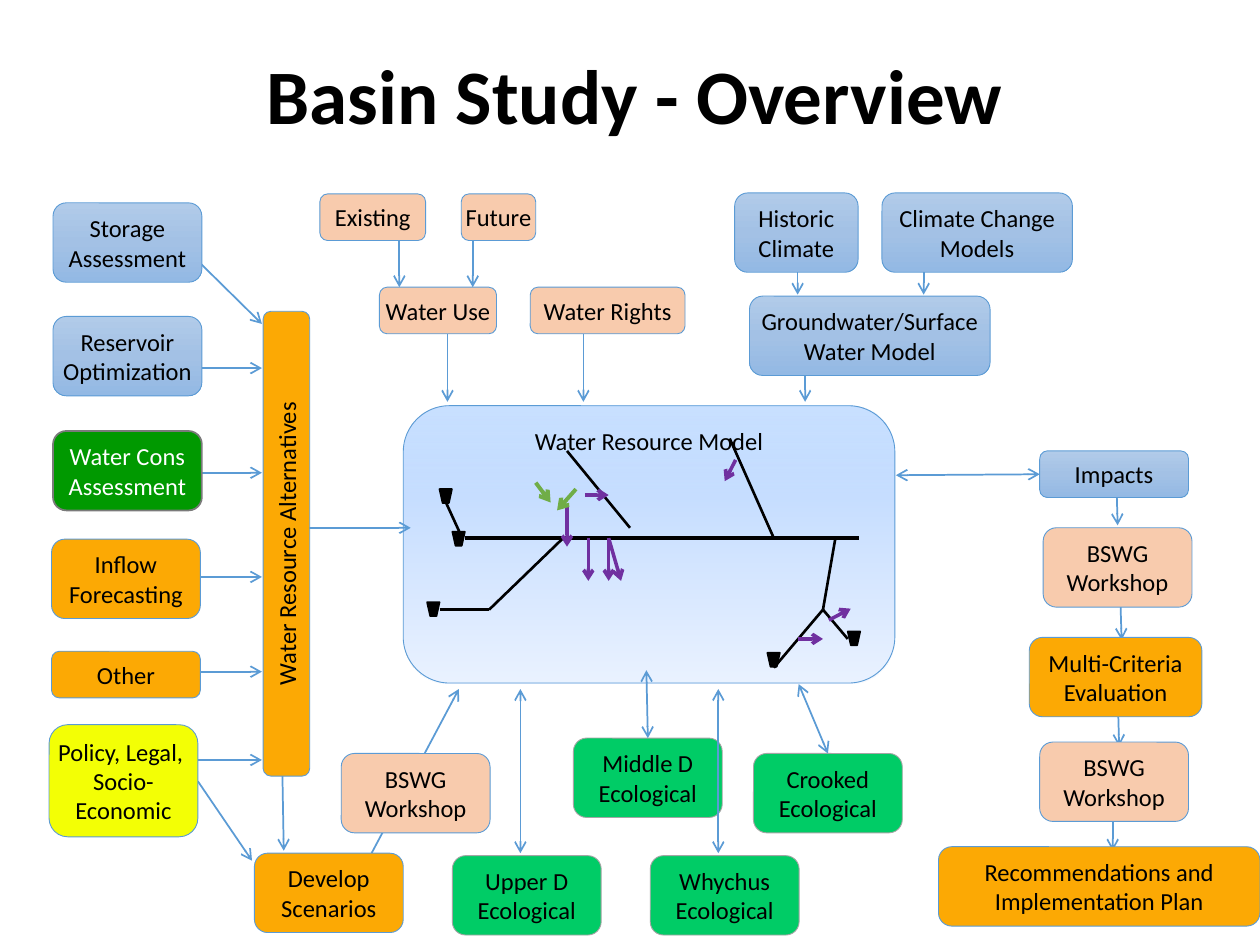
from lxml import etree
from pptx import Presentation
from pptx.dml.color import RGBColor
from pptx.enum import shapes as sh, text as tx
from pptx.oxml.ns import qn
from pptx.util import Cm, Pt

BLUE, ORANGE, PEACH, GREEN = "5B9BD5", "FCA904", "F8CBAD", "00CC66"
PURPLE, LEAF, BLACK, GREY = "7030A0", "70AD47", "000000", "A5A5A5"
# Gradient stops: position and opacity in percent
SKY = [(0, "B1CBE9", 100), (50, "A3C1E5", 100), (100, "93B9E4", 100)]
PALE = [(0, "B0D2FF", 68), (35, "C7DEFF", 100), (100, "EAF2FF", 100)]
rgb = RGBColor.from_string

prs = Presentation()
prs.slide_width, prs.slide_height = Cm(25.4), Cm(19.05)
slide = prs.slides.add_slide(prs.slide_layouts[5])

title = slide.shapes.title
title.left, title.top, title.width, title.height = Cm(1.47), Cm(0.64), Cm(22.66), Cm(2.74)
title.text_frame.vertical_anchor = tx.MSO_ANCHOR.MIDDLE
heading = title.text_frame.paragraphs[0]
heading.alignment, heading.line_spacing = tx.PP_ALIGN.CENTER, 0.9
run = heading.add_run()
run.text = "Basin Study - Overview"
run.font.name, run.font.size, run.font.bold = "Calibri", Pt(44), True
run.font.color.rgb = rgb(BLACK)


def add_box(label, fill, left, top, width=3, height=1.6, edge=BLUE, edge_width=0.5, ink=BLACK):
    box = slide.shapes.add_shape(sh.MSO_SHAPE.ROUNDED_RECTANGLE,
                                 Cm(left), Cm(top), Cm(width), Cm(height))
    box.shadow.inherit = False
    if isinstance(fill, str):
        box.fill.solid()
        box.fill.fore_color.rgb = rgb(fill)
    else:
        box.fill.gradient()
        box.fill.gradient_angle = 270
        stops = box.element.spPr.find(qn("a:gradFill")).find(qn("a:gsLst"))
        for old in list(stops):
            stops.remove(old)
        for position, colour, opacity in fill:
            stop = etree.SubElement(stops, qn("a:gs"), pos=str(position * 1000))
            tone = etree.SubElement(stop, qn("a:srgbClr"), val=colour)
            if opacity < 100:
                etree.SubElement(tone, qn("a:alpha"), val=str(opacity * 1000))
    box.line.color.rgb, box.line.width = rgb(edge), Pt(edge_width)
    frame = box.text_frame
    frame.word_wrap = True
    frame.margin_left = frame.margin_right = 0
    frame.margin_top = frame.margin_bottom = Cm(0.13)
    frame.vertical_anchor = tx.MSO_ANCHOR.MIDDLE
    for i, words in enumerate(label.split("\n")):
        para = frame.paragraphs[0] if i == 0 else frame.add_paragraph()
        para.alignment = tx.PP_ALIGN.CENTER
        run = para.add_run()
        run.text = words
        run.font.name, run.font.size = "Calibri", Pt(14)
        run.font.color.rgb = rgb(ink)
    return box


def add_line(x1, y1, x2, y2, colour=BLUE, width=1, ends=("tailEnd",)):
    line = slide.shapes.add_connector(sh.MSO_CONNECTOR.STRAIGHT, Cm(x1), Cm(y1), Cm(x2), Cm(y2))
    line.line.color.rgb, line.line.width = rgb(colour), Pt(width)
    for end in ends:
        etree.SubElement(line.element.spPr.find(qn("a:ln")), qn("a:" + end), type="arrow")
    etree.SubElement(line.element.spPr, qn("a:effectLst"))
    return line


BOTH = ("headEnd", "tailEnd")

model = add_box("Water Resource Model", PALE, 8.13, 8.18, 9.91, 5.59)
model.text_frame.vertical_anchor = tx.MSO_ANCHOR.TOP

# Arrows that run behind the boxes
for y in (7.42, 9.53, 11.63, 13.54, 15.32):
    add_line(3.78, y, 5.28, y)
for x in (9.02, 11.76, 16.23):
    add_line(x, 6.53, x, 8.1)
for x in (16.08, 18.62):
    add_line(x, 4.93, x, 5.94)
for x in (8.05, 9.53):
    add_line(x, 4.8, x, 5.79)
for ends in [
    (4.04, 5.31, 5.28, 6.53),
    (5.69, 15.44, 5.72, 17.15),
    (3.99, 15.75, 5.08, 17.35),
    (7.49, 17.2, 9.25, 13.89),
    (22.5, 9.53, 22.53, 10.59),
    (22.58, 11.84, 22.61, 12.9),
    (22.53, 13.94, 22.56, 15.04),
]:
    add_line(*ends)
add_line(22.43, 15.7, 22.43, 17.15, ends=BOTH)
add_line(8.28, 10.64, 5.97, 10.64, ends=BOTH)

# Inputs to the alternatives
add_box("Storage Assessment", SKY, 1.07, 4.09)
add_box("Reservoir Optimization", SKY, 1.07, 6.38)
add_box("Water Cons Assessment", "009900", 1.07, 8.69, edge="7A7A7A", edge_width=1, ink="FFFFFF")
add_box("Inflow Forecasting", ORANGE, 1.04, 10.87)
add_box("Other", ORANGE, 1.04, 13.13, height=0.94)
add_box("Policy, Legal, \nSocio-Economic", "F3FF05", 0.99, 14.61, height=2.26)
alternatives = add_box("Water Resource Alternatives", ORANGE, 1.09, 10.49, 9.37, 0.94)
alternatives.rotation = 270
add_box("Develop Scenarios", ORANGE, 5.13, 17.2)
add_box("BSWG Workshop", PEACH, 6.88, 15.19)

# Inputs to the model
add_box("Existing", PEACH, 6.45, 3.91, 2.13, 0.94)
add_box("Future", PEACH, 9.3, 3.91, 1.5, 0.94)
add_box("Water Use", PEACH, 7.65, 5.79, 2.36, 0.94)
add_box("Water Rights", PEACH, 10.69, 5.79, 3.12, 0.94)
add_box("Historic Climate", SKY, 14.81, 3.89, 2.49)
add_box("Climate Change Models", SKY, 17.78, 3.89, 3.84)
add_box("Groundwater/Surface Water Model", SKY, 15.11, 5.97, 4.85)

# Ecological studies
add_box("Upper D Ecological", GREEN, 9.12, 17.25, edge=GREY)
middle = add_box("Middle D Ecological", GREEN, 11.56, 14.88, edge=GREY)
add_box("Whychus Ecological", GREEN, 13.11, 17.25, edge=GREY)
crooked = add_box("Crooked Ecological", GREEN, 15.19, 15.19, edge=GREY)

# From impacts to the plan
impacts = add_box("Impacts", SKY, 20.96, 9.09, height=0.94)
add_box("BSWG Workshop", PEACH, 21.03, 10.64)
add_box("Multi-Criteria Evaluation", ORANGE, 20.75, 12.85, 3.48)
add_box("BSWG Workshop", PEACH, 20.96, 14.96)
add_box("Recommendations and Implementation Plan", ORANGE, 18.92, 17.07, 6.48)

# Two-way arrows around the model
for x in (10.49, 14.48):
    add_line(x, 13.89, x, 17.2, ends=BOTH)
add_line(13.03, 13.51, 13.03, 14.88, ends=BOTH).end_connect(middle, 0)
add_line(16.1, 13.79, 16.69, 15.19, ends=BOTH).end_connect(crooked, 0)
add_line(18.06, 9.58, 20.96, 9.58, ends=BOTH).end_connect(impacts, 1)

# River network: main stem, tributaries, reservoirs, diversions, return flows
add_line(9.37, 10.85, 17.32, 10.85, BLACK, 2.25, ())
for tributary in [
    (8.99, 10.13, 9.32, 10.85),
    (9.86, 12.29, 11.35, 10.85),
    (8.86, 12.29, 9.86, 12.29),
    (16.84, 10.85, 16.59, 12.29),
    (16.59, 12.29, 15.6, 13.46),
    (17.09, 12.88, 16.59, 12.29),
    (11.43, 9.09, 12.7, 10.64),
    (14.71, 8.84, 15.6, 10.85),
]:
    add_line(*tributary, BLACK, 1.5, ())
for x, y in [(17.09, 12.73), (15.47, 13.16), (8.61, 12.14), (9.12, 10.72), (8.86, 9.86)]:
    reservoir = slide.shapes.add_shape(sh.MSO_SHAPE.TRAPEZOID, Cm(x), Cm(y), Cm(0.25), Cm(0.28))
    reservoir.rotation = 180
    reservoir.shadow.inherit = False
    reservoir.fill.solid()
    reservoir.fill.fore_color.rgb = reservoir.line.color.rgb = rgb(BLACK)
    reservoir.line.width = Pt(1)
for diversion in [
    (12.27, 10.85, 12.27, 11.71),
    (11.86, 10.85, 11.86, 11.71),
    (12.27, 10.85, 12.52, 11.71),
    (11.43, 10.16, 11.43, 11.02),
    (11.79, 9.98, 12.27, 9.98),
    (14.83, 9.27, 14.61, 9.7),
    (16.08, 12.88, 16.59, 12.88),
    (16.71, 12.5, 17.15, 12.27),
]:
    add_line(*diversion, PURPLE, 2)
for return_flow in [(11.61, 9.86, 11.23, 10.29), (10.8, 9.73, 11.1, 10.13)]:
    add_line(*return_flow, LEAF, 2.25)

prs.save("out.pptx")
